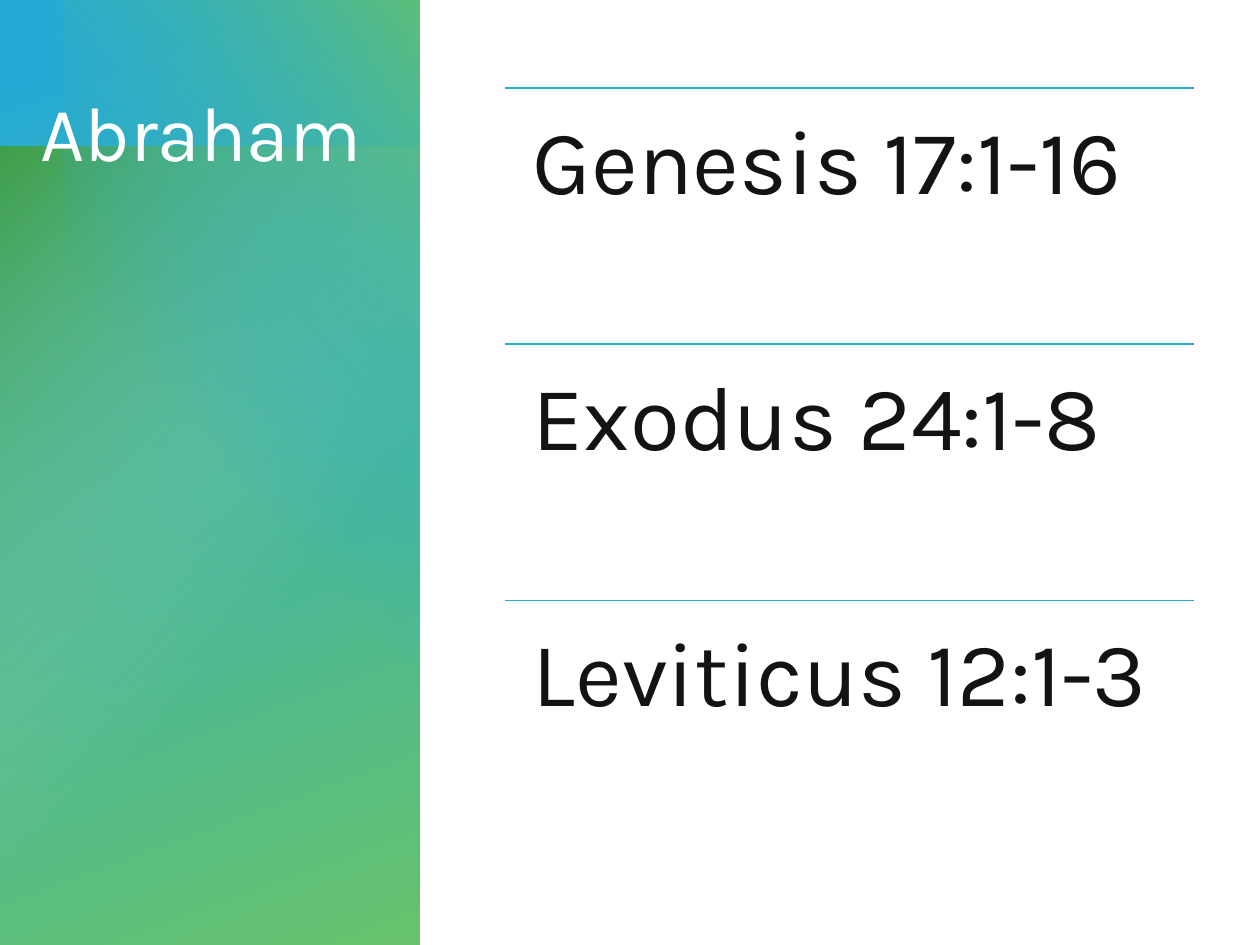
import lxml.etree
import pptx
import pptx.dml.color
import pptx.enum.shapes
import pptx.enum.text
import pptx.oxml.ns
import pptx.util

COLORS = {"blue": "25AAD5", "leaf": "66C26C", "forest": "3F9F46",
          "mint": "A3DAA7", "white": "FFFFFF", "ink": "131313"}
READINGS = ["Genesis 17:1-16", "Exodus 24:1-8", "Leviticus 12:1-3"]
FONT = "Karla"
INCH = pptx.util.Inches


def rgb(name):
    """Return a named colour."""
    return pptx.dml.color.RGBColor.from_string(COLORS[name])


def child(parent, tag, **attributes):
    """Add a drawing element and return it."""
    element = lxml.etree.SubElement(parent, pptx.oxml.ns.qn(f"a:{tag}"))
    for name, value in attributes.items():
        element.set(name, str(value))
    return element


def add_wash(page, box, rotation, stops, angle=None):
    """Add a gradient rectangle, linear at an angle or else radial from a corner."""
    wash = page.shapes.add_shape(
        pptx.enum.shapes.MSO_SHAPE.RECTANGLE, *[INCH(part) for part in box])
    wash.rotation = rotation
    wash.shadow.inherit = False
    wash.line.fill.background()
    wash.fill.gradient()
    gradient = wash.element.spPr.find(pptx.oxml.ns.qn("a:gradFill"))
    for part in list(gradient):
        gradient.remove(part)
    gradient.set("rotWithShape", "1")
    stop_list = child(gradient, "gsLst")
    for position, color, opacity in stops:
        stop = child(stop_list, "gs", pos=position * 1000)
        shade = child(stop, "srgbClr", val=COLORS[color])
        if opacity < 100:
            child(shade, "alpha", val=opacity * 1000)
    if angle is None:
        path = child(gradient, "path", path="circle")
        child(path, "fillToRect", r=100000, b=100000)
    else:
        child(gradient, "lin", ang=angle * 60000, scaled=0)


def write(frame, text, size, color):
    """Write one line of text at the top of a frame."""
    frame.word_wrap = True
    frame.auto_size = pptx.enum.text.MSO_AUTO_SIZE.NONE
    frame.vertical_anchor = pptx.enum.text.MSO_ANCHOR.TOP
    para = frame.paragraphs[0]
    para.alignment = pptx.enum.text.PP_ALIGN.LEFT
    para.line_spacing = 0.9
    span = para.add_run()
    span.text = text
    span.font.name = FONT
    span.font.size = pptx.util.Pt(size)
    span.font.color.rgb = rgb(color)


def add_panel(page, box, heading):
    """Place the coloured side panel and its title."""
    left, top, width, height = box
    add_wash(page, box, 0, [(7, "blue", 100), (100, "leaf", 100)], 70)
    drop = 1.16
    add_wash(page, (left, top + drop, width, height - drop), 180,
             [(0, "forest", 100), (60, "mint", 0)])
    long, short = 6.25, 2.83
    add_wash(page, (left + width - (short + long) / 2, top + (long - short) / 2,
                    long, short), 270, [(0, "leaf", 86), (57, "blue", 0)], 230)
    title = page.shapes.title
    title.left, title.top = INCH(left + 0.22), INCH(top + 0.7)
    title.width, title.height = INCH(2.81), INCH(4.39)
    write(title.text_frame, heading, 44, "white")
    title.element.getparent().append(title.element)


def add_readings(page, box, readings):
    """Place equal rows, each with a rule above its reading."""
    left, top, width, height = box
    row = height / len(readings)
    for index, reading in enumerate(readings):
        level = top + index * row
        rule = page.shapes.add_connector(
            pptx.enum.shapes.MSO_CONNECTOR.STRAIGHT,
            INCH(left), INCH(level), INCH(left + width), INCH(level))
        rule.line.color.rgb = rgb("blue")
        rule.line.width = pptx.util.Pt(1)
        child(rule.element.spPr, "effectLst")
        frame = page.shapes.add_textbox(
            INCH(left), INCH(level), INCH(width), INCH(row)).text_frame
        frame.margin_left = frame.margin_right = INCH(0.22)
        frame.margin_top = frame.margin_bottom = INCH(0.22)
        write(frame, reading, 52, "ink")


def main():
    """Build the deck."""
    deck = pptx.Presentation()
    deck.slide_width, deck.slide_height = INCH(10), INCH(7.5)
    page = deck.slides.add_slide(deck.slide_layouts[5])
    page.background.fill.solid()
    page.background.fill.fore_color.rgb = rgb("white")
    add_panel(page, (0, 0, 3.33, 7.51), "Abraham")
    add_readings(page, (4.01, 0.7, 5.47, 6.1), READINGS)
    deck.save("out.pptx")


if __name__ == "__main__":
    main()
